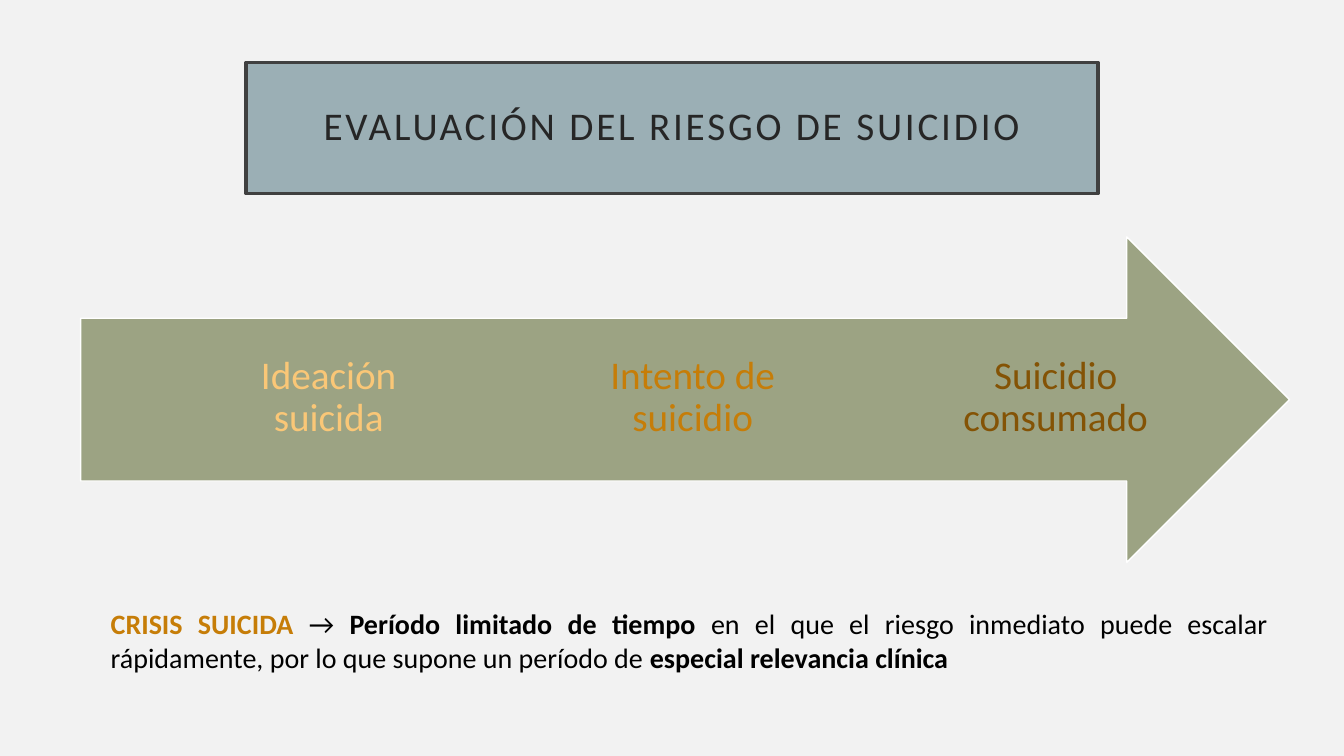
"""Build the slide on assessing suicide risk."""
from typing import NamedTuple

from pptx import Presentation
from pptx.dml.color import RGBColor
from pptx.enum.shapes import MSO_SHAPE as Preset
from pptx.enum.text import MSO_ANCHOR as Anchor, PP_ALIGN as Align
from pptx.util import Inches, Pt

COLORS = {
    "background": "F2F2F2",
    "title_fill": "9BAFB5",
    "title_line": "404040",
    "title_text": "262626",
    "arrow": "9CA383",
    "white": "FFFFFF",
    "black": "000000",
    "light_orange": "FAC777",
    "orange": "C67D08",
    "brown": "845305",
}
FONT = "Calibri"


class Box(NamedTuple):
    left: float
    top: float
    width: float
    height: float


class Block(NamedTuple):
    preset: Preset
    box: Box
    fill: str
    line: str
    line_width: float


class Stage(NamedTuple):
    text: str
    left: float
    width: float
    color: str


class Phrase(NamedTuple):
    text: str
    color: str
    bold: bool


TITLE = Block(Preset.RECTANGLE, Box(2.44, 0.62, 8.45, 1.3), "title_fill", "title_line", 2.5)
ARROW = Block(Preset.RIGHT_ARROW, Box(0.8, 2.35, 11.99, 3.23), "arrow", "white", 1)
STAGES = [
    Stage("Ideación suicida", 2.11, 2.3, "light_orange"),
    Stage("Intento de suicidio", 5.82, 2.1, "orange"),
    Stage("Suicidio consumado", 8.97, 3, "brown"),
]
DEFINITION = [
    Phrase("CRISIS SUICIDA ", "orange", True),
    Phrase("→ ", "black", False),
    Phrase("Período limitado de tiempo ", "black", True),
    Phrase("en el que el riesgo inmediato puede escalar rápidamente, "
           "por lo que supone un período de", "black", False),
    Phrase(" especial relevancia clínica", "black", True),
]


def rgb(name: str) -> RGBColor:
    return RGBColor.from_string(COLORS[name])


def inches(box: Box) -> list[Inches]:
    return [Inches(length) for length in box]


def add_block(slide, block: Block):
    shape = slide.shapes.add_shape(block.preset, *inches(block.box))
    shape.shadow.inherit = False
    shape.fill.solid()
    shape.fill.fore_color.rgb = rgb(block.fill)
    shape.line.color.rgb = rgb(block.line)
    shape.line.width = Pt(block.line_width)
    return shape


def set_heading(shape, text: str, color: str, side: float, end: float):
    frame = shape.text_frame
    frame.word_wrap = True
    frame.vertical_anchor = Anchor.MIDDLE
    frame.margin_left = frame.margin_right = Inches(side)
    frame.margin_top = frame.margin_bottom = Inches(end)
    paragraph = frame.paragraphs[0]
    paragraph.text = text
    paragraph.alignment = Align.CENTER
    paragraph.line_spacing = 0.9
    paragraph.font.name = FONT
    paragraph.font.size = Pt(28)
    paragraph.font.color.rgb = rgb(color)
    return paragraph


def add_title(slide) -> None:
    shape = add_block(slide, TITLE)
    paragraph = set_heading(shape, "EVALUACIÓN DEL RIESGO DE SUICIDIO", "title_text", 0.2, 0.2)
    paragraph.runs[0].font._element.set("spc", "200")


def add_stage(slide, stage: Stage) -> None:
    shape = slide.shapes.add_textbox(*inches(Box(stage.left, 3.14, stage.width, 1.61)))
    set_heading(shape, stage.text, stage.color, 0, 0.31)


def add_definition(slide, phrases: list[Phrase]) -> None:
    frame = slide.shapes.add_textbox(*inches(Box(1, 5.97, 11.67, 0.77))).text_frame
    frame.word_wrap = True
    paragraph = frame.paragraphs[0]
    paragraph.alignment = Align.JUSTIFY
    paragraph.font.name = FONT
    paragraph.font.size = Pt(20)
    for phrase in phrases:
        run = paragraph.add_run()
        run.text = phrase.text
        run.font.bold = phrase.bold
        run.font.color.rgb = rgb(phrase.color)


def main() -> None:
    presentation = Presentation()
    presentation.slide_width = Inches(13.33)
    presentation.slide_height = Inches(7.5)
    slide = presentation.slides.add_slide(presentation.slide_layouts[6])
    slide.background.fill.solid()
    slide.background.fill.fore_color.rgb = rgb("background")
    add_title(slide)
    add_block(slide, ARROW)
    for stage in STAGES:
        add_stage(slide, stage)
    add_definition(slide, DEFINITION)
    presentation.save("out.pptx")


if __name__ == "__main__":
    main()
